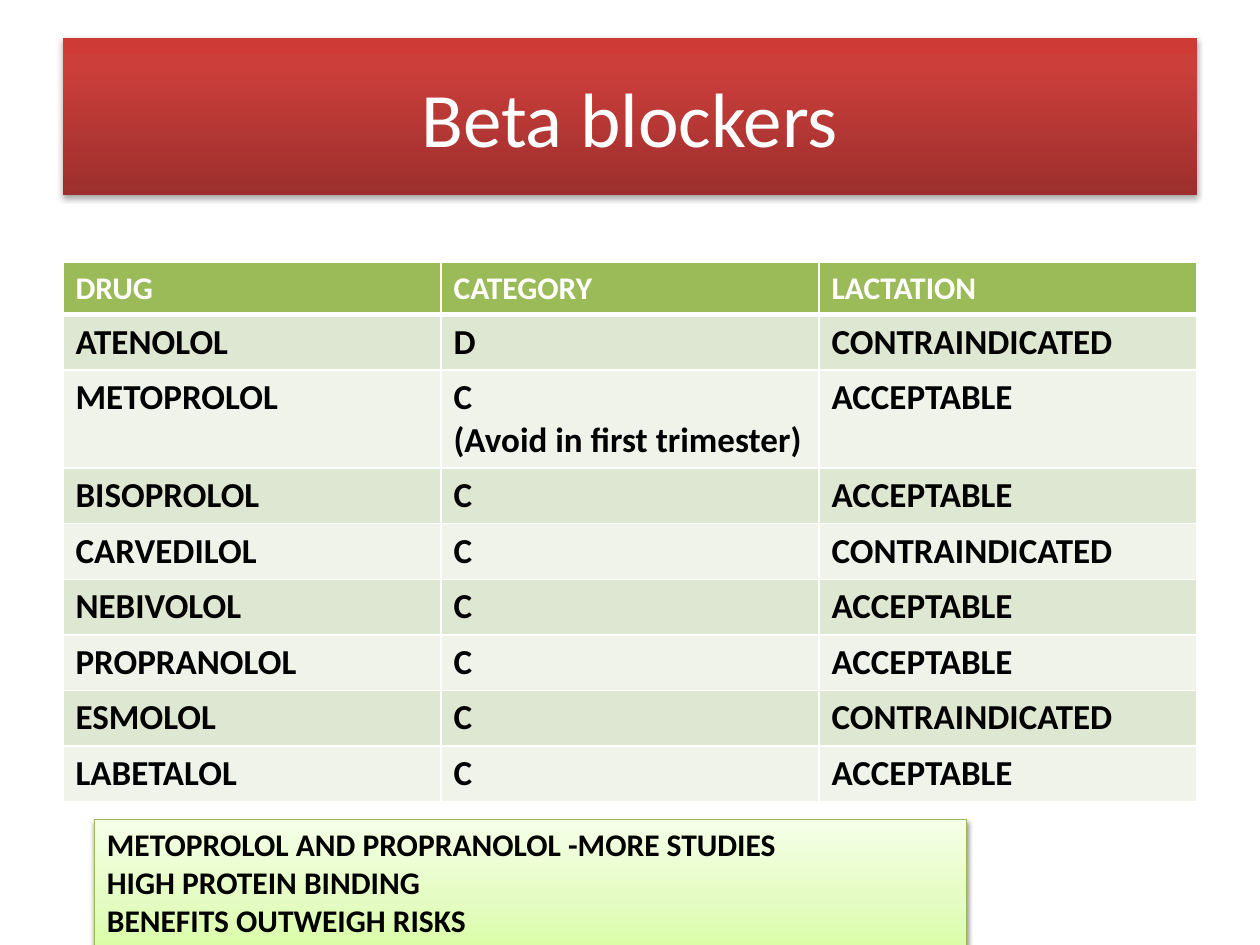
from lxml.etree import SubElement
from pptx import Presentation
from pptx.dml.color import RGBColor
from pptx.enum.shapes import MSO_SHAPE
from pptx.enum.text import MSO_ANCHOR, MSO_AUTO_SIZE, PP_ALIGN
from pptx.oxml.ns import qn
from pptx.util import Inches, Pt

WIDTH, HEIGHT = Inches(10), Inches(7.5)
COLORS = {
    "white": "FFFFFF",
    "black": "000000",
    "header": "9BBB59",
    "odd_row": "DEE7D1",
    "even_row": "EFF3EA",
    "note_line": "98B955",
}
TITLE_STOPS = [(0, "9C2F2D"), (80, "CB3E3A"), (100, "CE3B37")]
NOTE_STOPS = [(0, "DAFDA7"), (35, "E4FCC2"), (100, "F5FFE7")]
TITLE_FONT = {"name": "Calibri", "size": Pt(44), "bold": False}
HEADER_FONT = {"name": "Calibri", "size": Pt(18), "bold": True}
DRUG_FONT = {"name": "Calibri", "size": Pt(20), "bold": True}
DRUGS = [
    ("DRUG", "CATEGORY", "LACTATION"),
    ("ATENOLOL", "D", "CONTRAINDICATED"),
    ("METOPROLOL", "C\n(Avoid in first trimester)", "ACCEPTABLE"),
    ("BISOPROLOL", "C", "ACCEPTABLE"),
    ("CARVEDILOL", "C", "CONTRAINDICATED"),
    ("NEBIVOLOL", "C", "ACCEPTABLE"),
    ("PROPRANOLOL", "C", "ACCEPTABLE"),
    ("ESMOLOL", "C", "CONTRAINDICATED"),
    ("LABETALOL", "C", "ACCEPTABLE"),
]
NOTES = "METOPROLOL AND PROPRANOLOL -MORE STUDIES\nHIGH PROTEIN BINDING\nBENEFITS OUTWEIGH RISKS"


def share(left, top, width, height):
    return [int(WIDTH * left), int(HEIGHT * top), int(WIDTH * width), int(HEIGHT * height)]


def write_text(frame, text, font_format, color, align=PP_ALIGN.LEFT):
    frame.text = text
    for paragraph in frame.paragraphs:
        paragraph.alignment = align
        for run in paragraph.runs:
            for attribute, value in font_format.items():
                setattr(run.font, attribute, value)
            run.font.color.rgb = RGBColor.from_string(COLORS[color])


def add_color(parent, color, alpha=100):
    node = SubElement(parent, qn("a:srgbClr"), val=color)
    if alpha < 100:
        SubElement(node, qn("a:alpha"), val=str(alpha * 1000))


def add_banner(slide, box, stops, shadow_alpha, shadow_distance):
    banner = slide.shapes.add_shape(MSO_SHAPE.RECTANGLE, *box)
    banner.fill.gradient()
    banner.fill.gradient_angle = 90
    stop_list = banner.element.spPr.find(qn("a:gradFill")).find(qn("a:gsLst"))
    for stop in list(stop_list):
        stop_list.remove(stop)
    for position, color in stops:
        add_color(SubElement(stop_list, qn("a:gs"), pos=str(position * 1000)), color)
    banner.line.fill.background()
    banner.shadow.inherit = False
    effects = banner.element.spPr.find(qn("a:effectLst"))
    shadow = SubElement(effects, qn("a:outerShdw"), blurRad=str(Pt(3.1)),
                        dist=str(Pt(shadow_distance)), dir="5400000", rotWithShape="0")
    add_color(shadow, COLORS["black"], shadow_alpha)
    return banner


def add_title(slide):
    title = add_banner(slide, share(0.05, 0.04, 0.9, 1 / 6), TITLE_STOPS, 35, 1.8)
    title.text_frame.vertical_anchor = MSO_ANCHOR.MIDDLE
    write_text(title.text_frame, "Beta blockers", TITLE_FONT, "white", PP_ALIGN.CENTER)


def add_borders(cell, bottom_width):
    properties = cell._tc.get_or_add_tcPr()
    for side, width in (("L", 1), ("R", 1), ("T", 1), ("B", bottom_width)):
        border = SubElement(properties, qn(f"a:ln{side}"), w=str(Pt(width)))
        add_color(SubElement(border, qn("a:solidFill")), COLORS["white"])


def add_drug_table(slide):
    box = share(0.05, 0.278, 0.9, 0.49)
    drug_table = slide.shapes.add_table(len(DRUGS), len(DRUGS[0]), *box).table
    for row_index, entries in enumerate(DRUGS):
        drug_table.rows[row_index].height = Inches(0.41)
        is_header = row_index == 0
        band = "header" if is_header else "odd_row" if row_index % 2 else "even_row"
        for column_index, entry in enumerate(entries):
            cell = drug_table.cell(row_index, column_index)
            add_borders(cell, 3 if is_header else 1)
            cell.fill.solid()
            cell.fill.fore_color.rgb = RGBColor.from_string(COLORS[band])
            write_text(cell.text_frame, entry, HEADER_FONT if is_header else DRUG_FONT,
                       "white" if is_header else "black")
            if row_index == 1:
                add_top_border(cell)


def add_top_border(cell):
    cell._tc.tcPr.find(qn("a:lnT")).set("w", str(Pt(3)))


def add_notes_box(slide):
    notes_box = add_banner(slide, share(0.075, 0.867, 0.692, 0.135), NOTE_STOPS, 38, 1.6)
    notes_box.line.color.rgb = RGBColor.from_string(COLORS["note_line"])
    notes_box.line.width = Pt(0.75)
    frame_format = {"word_wrap": True, "auto_size": MSO_AUTO_SIZE.SHAPE_TO_FIT_TEXT,
                    "vertical_anchor": MSO_ANCHOR.TOP}
    for attribute, value in frame_format.items():
        setattr(notes_box.text_frame, attribute, value)
    write_text(notes_box.text_frame, NOTES, HEADER_FONT, "black")


def main():
    presentation = Presentation()
    presentation.slide_width, presentation.slide_height = WIDTH, HEIGHT
    slide = presentation.slides.add_slide(presentation.slide_layouts[6])
    add_title(slide)
    add_drug_table(slide)
    add_notes_box(slide)
    presentation.save("out.pptx")


if __name__ == "__main__":
    main()
